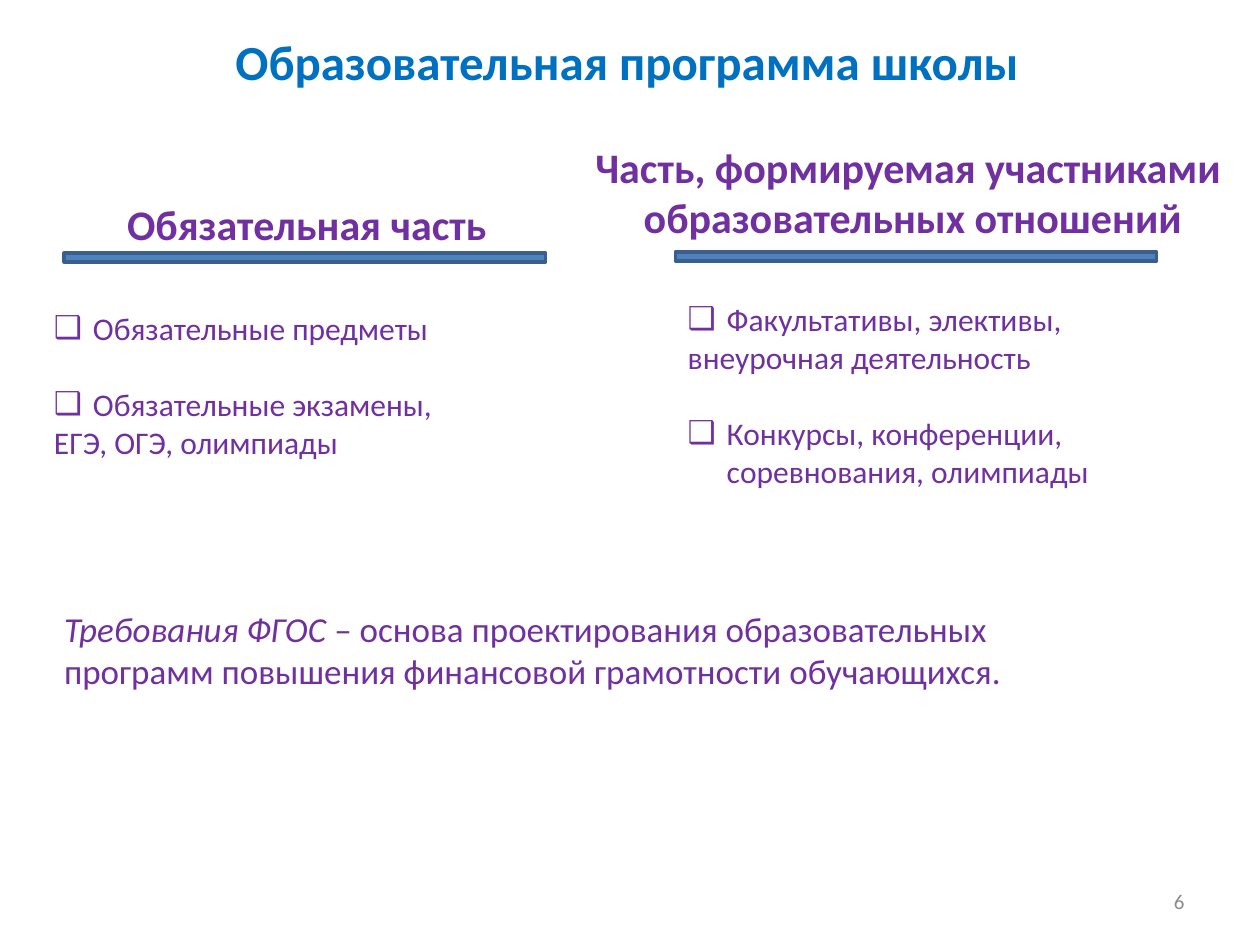
"""Build a slide on the two parts of a school's educational programme."""
from dataclasses import dataclass

from lxml import etree
from pptx import Presentation
from pptx import util as u
from pptx.dml.color import RGBColor
from pptx.enum import shapes, text
from pptx.oxml.ns import qn

SLIDE_W, SLIDE_H = u.Inches(10), u.Inches(7.5)
PURPLE, BLUE, GREY = "7030A0", "0070C0", "8C8C8C"
BAR_FILL, BAR_LINE = "4F81BD", "3A5F8C"
INDENT = u.Inches(0.31)
LIST_SIZE, LIST_GAP = 18, 22
ALIGN = text.PP_ALIGN


@dataclass(frozen=True)
class Box:
    """An area in percent of the slide's width and height."""
    left: float
    top: float
    width: float
    height: float

    def emu(self) -> tuple:
        """Return left, top, width and height in EMU."""
        return tuple(u.Emu(round(share * side / 100)) for share, side in zip(
            (self.left, self.top, self.width, self.height),
            (SLIDE_W, SLIDE_H) * 2))


@dataclass(frozen=True)
class Line:
    """A paragraph, with an optional bullet and a gap above in points."""
    words: str
    bullet: bool = False
    gap: float = 0


@dataclass(frozen=True)
class Block:
    """A text block with one style."""
    box: Box
    lines: tuple
    size: float
    color: str = PURPLE
    bold: bool = False
    align: ALIGN = ALIGN.LEFT
    wrap: bool = False
    anchor: text.MSO_ANCHOR = text.MSO_ANCHOR.TOP


BLOCKS = (
    Block(Box(71.7, 92.67, 23.3, 5.33), (Line("6"),), 12, GREY,
          align=ALIGN.RIGHT, wrap=True, anchor=text.MSO_ANCHOR.MIDDLE),
    Block(Box(17.7, 2.67, 64.8, 7.6),
          (Line("Образовательная программа школы"),), 28, BLUE, bold=True),
    Block(Box(9.1, 20.4, 30.9, 6.67),
          (Line("Обязательная часть"),), 24, bold=True),
    Block(Box(46, 14.27, 52.9, 12.13),
          (Line("Часть, формируемая участниками "),
           Line("образовательных отношений")),
          24, bold=True, align=ALIGN.CENTER),
    Block(Box(53.6, 31.07, 41.3, 21.6),
          (Line("Факультативы, элективы,", bullet=True),
           Line("внеурочная деятельность"),
           Line("Конкурсы, конференции, соревнования, олимпиады",
                bullet=True, gap=LIST_GAP)),
          LIST_SIZE, wrap=True),
    Block(Box(3.3, 32, 33, 17.47),
          (Line("Обязательные предметы", bullet=True),
           Line("Обязательные экзамены,", bullet=True, gap=LIST_GAP),
           Line("ЕГЭ, ОГЭ, олимпиады")),
          LIST_SIZE),
)
BARS = (Box(53.6, 26.67, 38.2, 0.93), Box(5.1, 26.8, 38.2, 0.93))
REQUIREMENTS = Block(
    Box(4.1, 63.6, 82.9, 10.27), (Line("Требования ФГОС "),), 20, wrap=True)
REQUIREMENTS_REST = ("– основа проектирования образовательных программ "
                     "повышения финансовой грамотности обучающихся.")


def rgb(color: str) -> RGBColor:
    """Turn a hex string into a colour."""
    return RGBColor.from_string(color)


def style_run(run, block: Block, italic: bool = False) -> None:
    """Give a run the font of its block."""
    font = run.font
    font.name, font.size = "Calibri", u.Pt(block.size)
    font.bold, font.italic = block.bold, italic
    font.color.rgb = rgb(block.color)


def add_bullet(paragraph) -> None:
    """Hang a box bullet in front of a paragraph."""
    properties = paragraph._p.get_or_add_pPr()
    properties.set("marL", str(INDENT))
    properties.set("indent", str(-INDENT))
    etree.SubElement(properties, qn("a:buFont")).set("typeface", "Calibri")
    etree.SubElement(properties, qn("a:buChar")).set("char", "❑")


def draw_block(slide, block: Block):
    """Draw a text block and return its text frame."""
    frame = slide.shapes.add_textbox(*block.box.emu()).text_frame
    frame.word_wrap = block.wrap
    frame.vertical_anchor = block.anchor
    frame.text = "\n".join(line.words for line in block.lines)
    for paragraph, line in zip(frame.paragraphs, block.lines):
        paragraph.alignment = block.align
        paragraph.space_before = u.Pt(line.gap)
        if line.bullet:
            add_bullet(paragraph)
        for run in paragraph.runs:
            style_run(run, block)
    return frame


def draw_bar(slide, box: Box) -> None:
    """Draw the bar under a column heading."""
    bar = slide.shapes.add_shape(shapes.MSO_SHAPE.RECTANGLE, *box.emu())
    bar.shadow.inherit = False
    bar.fill.solid()
    bar.fill.fore_color.rgb = rgb(BAR_FILL)
    bar.line.color.rgb = rgb(BAR_LINE)
    bar.line.width = u.Pt(2)


def draw_requirements(slide) -> None:
    """Draw the closing statement with its italic opening."""
    statement = draw_block(slide, REQUIREMENTS).paragraphs[0]
    statement.runs[0].font.italic = True
    rest = statement.add_run()
    rest.text = REQUIREMENTS_REST
    style_run(rest, REQUIREMENTS)


def main() -> None:
    """Build and save the slide."""
    deck = Presentation()
    deck.slide_width, deck.slide_height = SLIDE_W, SLIDE_H
    slide = deck.slides.add_slide(deck.slide_layouts[6])
    for block in BLOCKS:
        draw_block(slide, block)
    for bar in BARS:
        draw_bar(slide, bar)
    draw_requirements(slide)
    deck.save("out.pptx")


if __name__ == "__main__":
    main()
